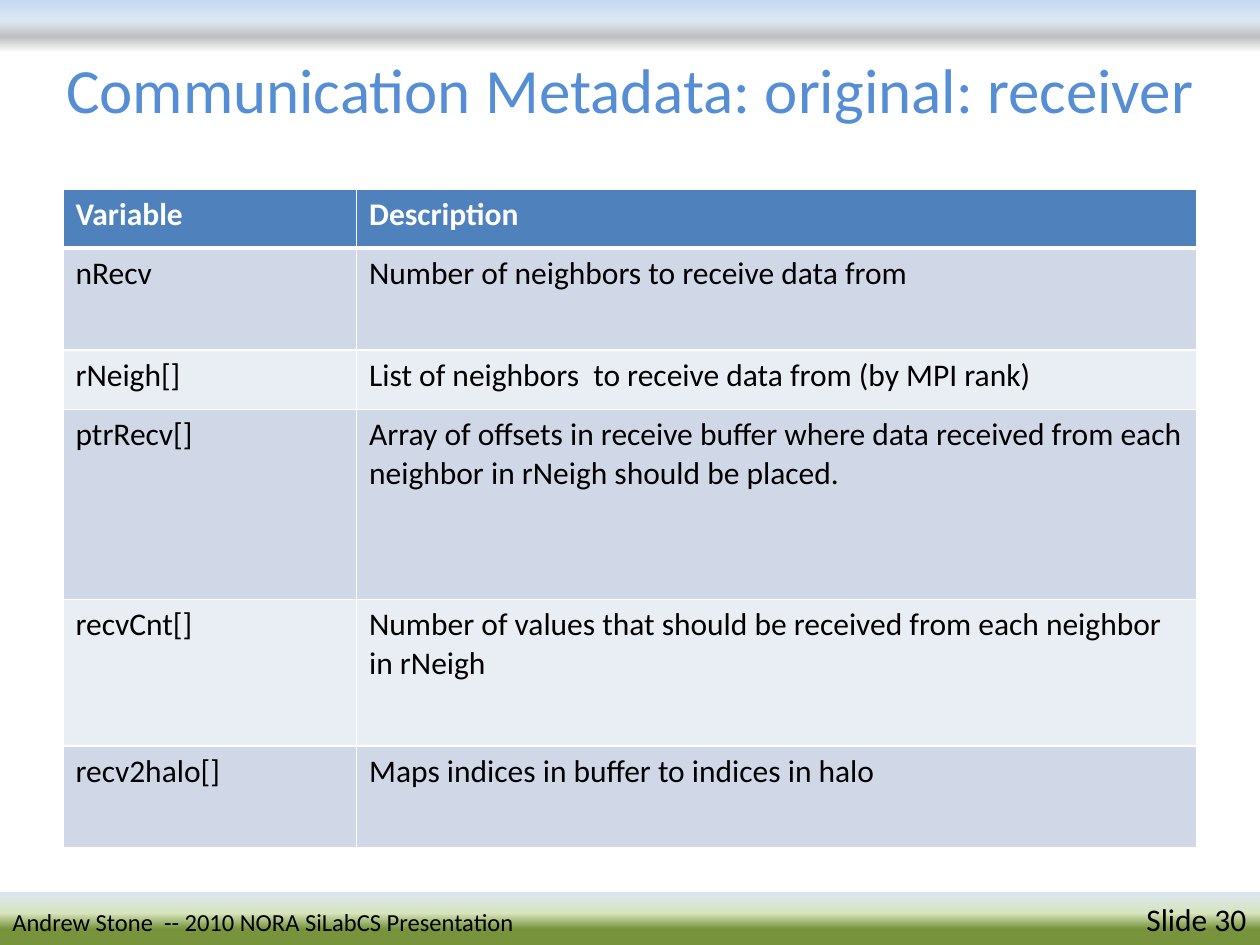
from typing import NamedTuple

from lxml import etree
from pptx import Presentation
from pptx import util as u
from pptx.dml.color import RGBColor
from pptx.enum import shapes, text
from pptx.oxml.ns import qn

FONT = "Calibri"
BLACK = RGBColor(0x00, 0x00, 0x00)
WHITE = RGBColor(0xFF, 0xFF, 0xFF)
TITLE_BLUE = RGBColor(0x55, 0x8E, 0xD5)
HEADER_BLUE = RGBColor(0x4F, 0x81, 0xBD)
BAND_DARK = RGBColor(0xD0, 0xD8, 0xE8)
BAND_LIGHT = RGBColor(0xE9, 0xED, 0xF4)
SKY = RGBColor(0xC6, 0xD9, 0xF1)
PALE_BLUE = RGBColor(0xDC, 0xE6, 0xF2)
GREY = RGBColor(0xBF, 0xBF, 0xBF)
PALE_GREEN = RGBColor(0xD7, 0xE4, 0xBD)
GREEN = RGBColor(0x77, 0x93, 0x3C)

W, H = u.Inches(10), u.Inches(7.5)
BAND_H = u.Inches(0.42)
MARGIN = int(W * 0.05)


class Stop(NamedTuple):
    percent: int
    color: RGBColor


class Row(NamedTuple):
    variable: str
    description: str
    height: float  # inches


ROWS = [
    Row("Variable", "Description", 0.47),
    Row("nRecv", "Number of neighbors to receive data from", 0.81),
    Row("rNeigh[]", "List of neighbors  to receive data from (by MPI rank)", 0.47),
    Row("ptrRecv[]", "Array of offsets in receive buffer where data received from each "
        "neighbor in rNeigh should be placed.", 1.51),
    Row("recvCnt[]", "Number of values that should be received from each neighbor "
        "in rNeigh", 1.16),
    Row("recv2halo[]", "Maps indices in buffer to indices in halo", 0.81),
]
COLUMNS = (2.33, 6.67)  # inches


def add_text(p, content: str, *, size: float = 18, color: RGBColor = BLACK,
             bold: bool = False) -> None:
    r = p.add_run()
    r.text = content
    r.font.name, r.font.size, r.font.bold = FONT, u.Pt(size), bold
    r.font.color.rgb = color


def add_band(s, top: int, stops: list[Stop]):
    """Full-width bar with a gradient running from top to bottom."""
    sp = s.shapes.add_shape(shapes.MSO_SHAPE.RECTANGLE, 0, top, W, BAND_H)
    sp.shadow.inherit = False
    sp.line.fill.background()
    sp.fill.gradient()
    sp.fill.gradient_angle = 270
    gs_list = sp.element.spPr.find(".//" + qn("a:gsLst"))
    for gs in list(gs_list):
        gs_list.remove(gs)
    for stop in stops:
        gs = etree.SubElement(gs_list, qn("a:gs"), pos=str(stop.percent * 1000))
        etree.SubElement(gs, qn("a:srgbClr"), val=str(stop.color))
    return sp


def set_borders(cell, **widths: float) -> None:
    """White cell edges, keyed L, R, T, B, in points."""
    tc_pr = cell._tc.get_or_add_tcPr()
    for side, width in widths.items():
        ln = etree.SubElement(tc_pr, qn(f"a:ln{side}"), w=str(u.Pt(width)))
        fill = etree.SubElement(ln, qn("a:solidFill"))
        etree.SubElement(fill, qn("a:srgbClr"), val=str(WHITE))


def add_variable_table(s) -> None:
    height = u.Inches(sum(row.height for row in ROWS))
    table = s.shapes.add_table(len(ROWS), len(COLUMNS), MARGIN, int(H * 0.2),
                               W - 2 * MARGIN, height).table
    for column, width in zip(table.columns, COLUMNS):
        column.width = u.Inches(width)
    for i, row in enumerate(ROWS):
        table.rows[i].height = u.Inches(row.height)
        header = i == 0
        fill = HEADER_BLUE if header else BAND_DARK if i % 2 else BAND_LIGHT
        for j, content in enumerate((row.variable, row.description)):
            cell = table.cell(i, j)
            set_borders(cell, L=1, R=1, T=3 if i == 1 else 1, B=3 if header else 1)
            cell.fill.solid()
            cell.fill.fore_color.rgb = fill
            add_text(cell.text_frame.paragraphs[0], content,
                     color=WHITE if header else BLACK, bold=header)


def add_footer(s) -> None:
    sp = add_band(s, H - BAND_H, [Stop(0, PALE_BLUE), Stop(40, PALE_GREEN), Stop(70, GREEN)])
    tf = sp.text_frame
    tf.vertical_anchor = text.MSO_ANCHOR.MIDDLE
    p = tf.paragraphs[0]
    p.alignment = text.PP_ALIGN.LEFT
    # Tab stop for the slide number
    tabs = etree.SubElement(p._p.get_or_add_pPr(), qn("a:tabLst"))
    etree.SubElement(tabs, qn("a:tab"), pos=str(u.Inches(9)), algn="l")
    add_text(p, "Andrew Stone  -- 2010 NORA SiLabCS Presentation \t", size=14)
    add_text(p, "Slide 30")


def main() -> None:
    prs = Presentation()
    prs.slide_width, prs.slide_height = W, H
    s = prs.slides.add_slide(prs.slide_layouts[5])

    # Title
    title = s.shapes.title
    title.left, title.top, title.width, title.height = 0, u.Inches(0.08), W, u.Inches(1.25)
    tf = title.text_frame
    tf.auto_size = text.MSO_AUTO_SIZE.NONE
    tf.vertical_anchor = text.MSO_ANCHOR.MIDDLE
    p = tf.paragraphs[0]
    p.alignment = text.PP_ALIGN.CENTER
    add_text(p, "Communication Metadata: original: receiver", size=36, color=TITLE_BLUE)

    # Bands at the top and bottom edges
    add_band(s, 0, [Stop(0, SKY), Stop(40, PALE_BLUE), Stop(70, GREY), Stop(100, WHITE)])
    add_footer(s)

    # Table of variables
    add_variable_table(s)

    prs.save("out.pptx")


if __name__ == "__main__":
    main()
